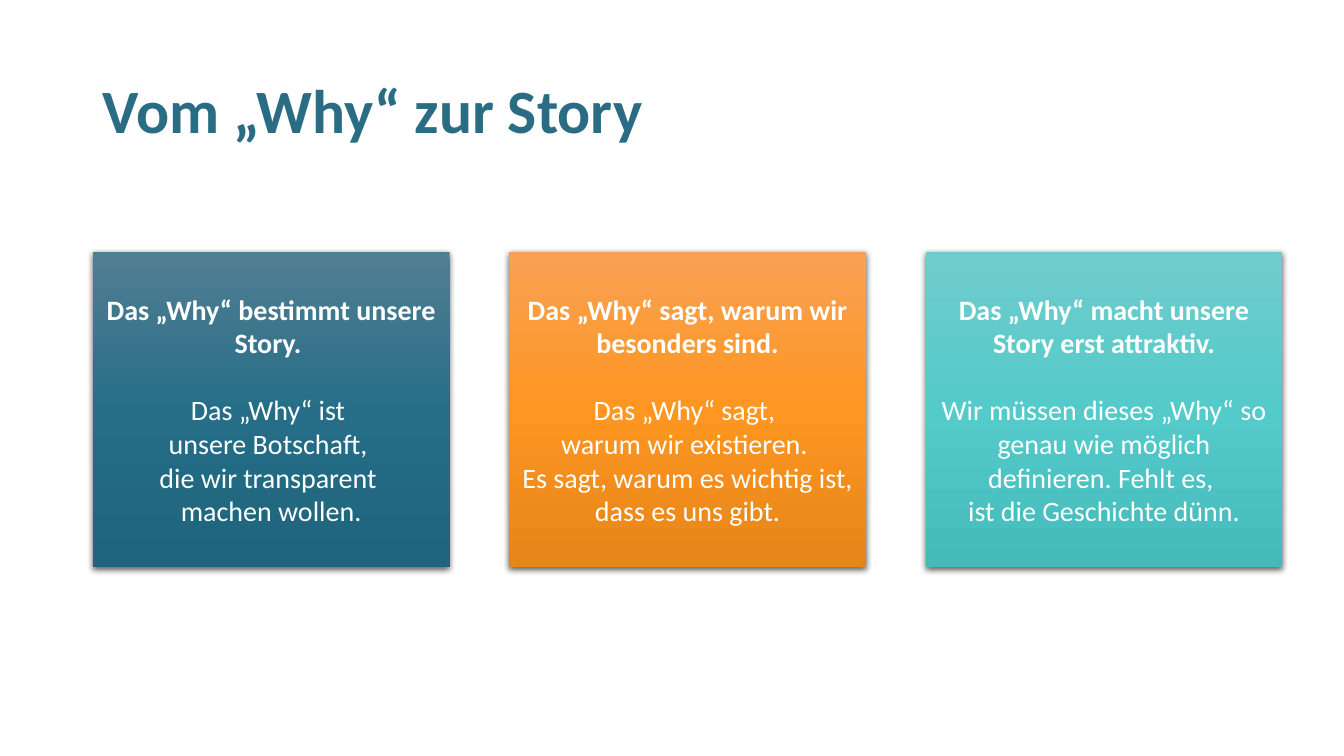
from copy import deepcopy

from lxml import etree
from pptx import Presentation
from pptx.dml.color import RGBColor
from pptx.enum.shapes import MSO_SHAPE
from pptx.enum.text import MSO_ANCHOR, PP_ALIGN
from pptx.oxml.ns import qn
from pptx.util import Inches, Pt

RECTANGLE = MSO_SHAPE.RECTANGLE
MIDDLE = MSO_ANCHOR.MIDDLE
LEFT, CENTER = PP_ALIGN.LEFT, PP_ALIGN.CENTER

COLORS = {"title": "2A6C83", "text": "FFFFFF", "shadow": "000000"}
GRADIENTS = {
    "blue": ("527E92", "266E87", "1D647C"),
    "orange": ("F8A154", "FE9621", "E5851A"),
    "turquoise": ("70CCCC", "54CACA", "44BABA"),
}
CARDS = [
    ("blue", "Das „Why“ bestimmt unsere Story. ",
     "Das „Why“ ist \nunsere Botschaft, \ndie wir transparent \nmachen wollen."),
    ("orange", "Das „Why“ sagt, warum wir besonders sind.",
     "Das „Why“ sagt, \nwarum wir existieren. \n"
     "Es sagt, warum es wichtig ist, dass es uns gibt."),
    ("turquoise", "Das „Why“ macht unsere Story erst attraktiv.",
     "Wir müssen dieses „Why“ so genau wie möglich definieren. Fehlt es, \n"
     "ist die Geschichte dünn."),
]


class StorySlide:
    font = "Calibri"
    margin, pitch, gap, row_height = 0.92, 4.13, 0.59, 0.5

    def __init__(self, presentation):
        self.slide = presentation.slides.add_slide(presentation.slide_layouts[6])

    def area(self, column, row, columns, rows):
        """Turn grid columns and rows into left, top, width and height."""
        return [Inches(length) for length in (
            self.margin + column * self.pitch, row * self.row_height,
            columns * self.pitch - self.gap, rows * self.row_height)]

    def set_text(self, paragraph, text, color, size, bold, **layout):
        paragraph.text = text
        for name, value in layout.items():
            setattr(paragraph, name, value)
        for run in paragraph.runs:
            style = {"name": self.font, "size": Pt(size), "bold": bold}
            for name, value in style.items():
                setattr(run.font, name, value)
            run.font.color.rgb = RGBColor.from_string(COLORS[color])

    def title(self, text, *grid):
        frame = self.slide.shapes.add_textbox(*self.area(*grid)).text_frame
        frame.word_wrap = True
        frame.vertical_anchor = MIDDLE
        self.set_text(frame.paragraphs[0], text, "title", 44, True,
                      alignment=LEFT, line_spacing=0.9)

    def card(self, gradient, heading, body, *grid):
        shape = self.slide.shapes.add_shape(RECTANGLE, *self.area(*grid))
        shape.line.fill.background()
        self.fill_gradient(shape, GRADIENTS[gradient])
        self.cast_shadow(shape)
        frame = shape.text_frame
        frame.word_wrap = True
        frame.vertical_anchor = MIDDLE
        self.set_text(frame.paragraphs[0], heading, "text", 20, True, alignment=CENTER)
        self.set_text(frame.add_paragraph(), body, "text", 20, False,
                      alignment=CENTER, space_before=Pt(24))

    def fill_gradient(self, shape, colors):
        """Fill from top to bottom with three evenly spaced colours."""
        shape.fill.gradient()
        shape.fill.gradient_angle = 270
        stop_list = shape._element.spPr.find(qn("a:gradFill")).find(qn("a:gsLst"))
        stop_list.append(deepcopy(stop_list[0]))
        for index, (stop, color) in enumerate(zip(shape.fill.gradient_stops, colors)):
            stop.position = index / 2
            stop.color.rgb = RGBColor.from_string(color)

    def cast_shadow(self, shape):
        shape.shadow.inherit = False
        effects = shape._element.spPr.find(qn("a:effectLst"))
        shadow = etree.SubElement(
            effects, qn("a:outerShdw"), blurRad=str(Pt(4.5)), dist=str(Pt(1.5)),
            dir="5400000", algn="ctr", rotWithShape="0")
        color = etree.SubElement(shadow, qn("a:srgbClr"), val=COLORS["shadow"])
        etree.SubElement(color, qn("a:alpha"), val="63000")


def main():
    presentation = Presentation()
    presentation.slide_width = Inches(13.33)
    presentation.slide_height = Inches(7.5)
    story = StorySlide(presentation)
    story.title("Vom „Why“ zur Story", 0, 0.8, 2.93, 2.9)
    for column, (gradient, heading, body) in enumerate(CARDS):
        story.card(gradient, heading, body, column, 5, 1, 6.26)
    presentation.save("out.pptx")


if __name__ == "__main__":
    main()
